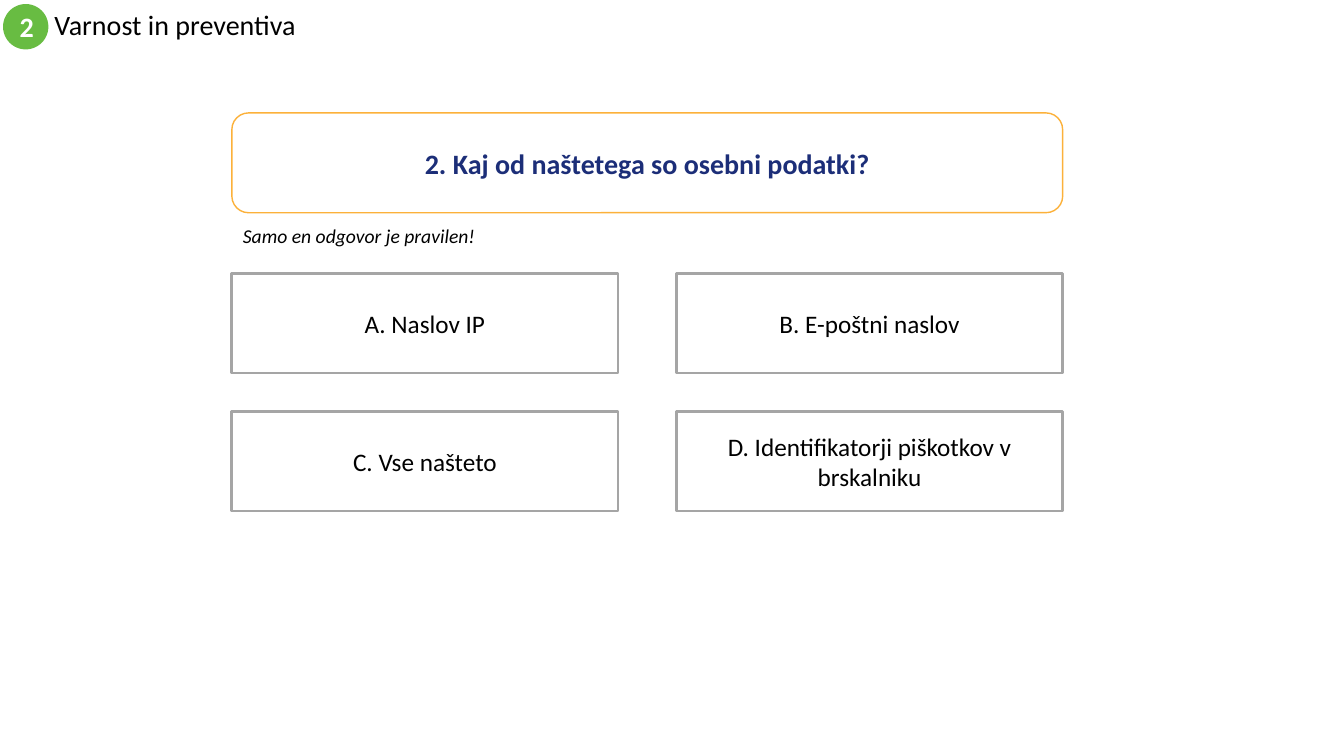
from pptx import Presentation
from pptx.dml.color import RGBColor
from pptx.enum.shapes import MSO_SHAPE as Shape
from pptx.enum.text import MSO_ANCHOR as Anchor, MSO_AUTO_SIZE as AutoSize, PP_ALIGN as Align
from pptx.util import Pt

TITLE = "Varnost in preventiva"
CHAPTER = "2"
QUESTION = "2. Kaj od naštetega so osebni podatki?"
HINT = "Samo en odgovor je pravilen!"
ANSWERS = [
    "A. Naslov IP",
    "B. E-poštni naslov",
    "C. Vse našteto",
    "D. Identifikatorji piškotkov v brskalniku",
]
COLORS = {
    "black": "000000",
    "white": "FFFFFF",
    "green": "68BC42",
    "orange": "FCB13A",
    "navy": "1C2E78",
    "gray": "A5A5A5",
}

PX = 9144  # 100 px to the inch
LEFT, CARD_HEIGHT = 230, 99
QUESTION_TOP, QUESTION_WIDTH = 112, 824
ANSWER_TOP, ANSWER_WIDTH = 271, 383
COLUMN_STEP, ROW_STEP = 441, 137


def px(*lengths):
    return [length * PX for length in lengths]


def color(name):
    return RGBColor.from_string(COLORS[name])


def write(shape, text, size=18, ink="black", bold=False, italic=False,
          align=Align.CENTER, anchor=Anchor.MIDDLE, spacing=None):
    frame = shape.text_frame
    frame.word_wrap = True
    frame.auto_size = AutoSize.NONE
    frame.vertical_anchor = anchor
    para = frame.paragraphs[0]
    para.alignment = align
    para.line_spacing = spacing
    span = para.add_run()
    span.text = text
    font = span.font
    font.name, font.size, font.bold, font.italic = "Calibri", Pt(size), bold, italic
    font.color.rgb = color(ink)


def add_card(page, kind, box, fill="white", line=None, line_width=1):
    card = page.shapes.add_shape(kind, *px(*box))
    card.shadow.inherit = False
    card.fill.solid()
    card.fill.fore_color.rgb = color(fill)
    if line:
        card.line.color.rgb = color(line)
        card.line.width = Pt(line_width)
    else:
        card.line.fill.background()
    return card


def main():
    deck = Presentation()
    deck.slide_width, deck.slide_height = px(1333, 750)
    page = deck.slides.add_slide(deck.slide_layouts[5])

    title = page.shapes.title
    title.left, title.top, title.width, title.height = px(44, 4, 800, 45)
    write(title, TITLE, size=20, align=Align.LEFT, spacing=0.9)

    badge = add_card(page, Shape.OVAL, (3, 4, 45, 45), fill="green")
    write(badge, CHAPTER, size=20, ink="white", bold=True)

    question = add_card(page, Shape.ROUNDED_RECTANGLE,
                        (LEFT, QUESTION_TOP, QUESTION_WIDTH, CARD_HEIGHT), line="orange")
    write(question, QUESTION, size=20, ink="navy", bold=True)

    hint = page.shapes.add_textbox(*px(LEFT + 1, 217, 328, 34))
    write(hint, HINT, size=14, italic=True, align=Align.LEFT, anchor=Anchor.TOP)

    for index, answer in enumerate(ANSWERS):
        row, column = divmod(index, 2)
        box = (LEFT + column * COLUMN_STEP, ANSWER_TOP + row * ROW_STEP,
               ANSWER_WIDTH, CARD_HEIGHT)
        write(add_card(page, Shape.RECTANGLE, box, line="gray", line_width=2), answer)

    deck.save("out.pptx")


if __name__ == "__main__":
    main()
